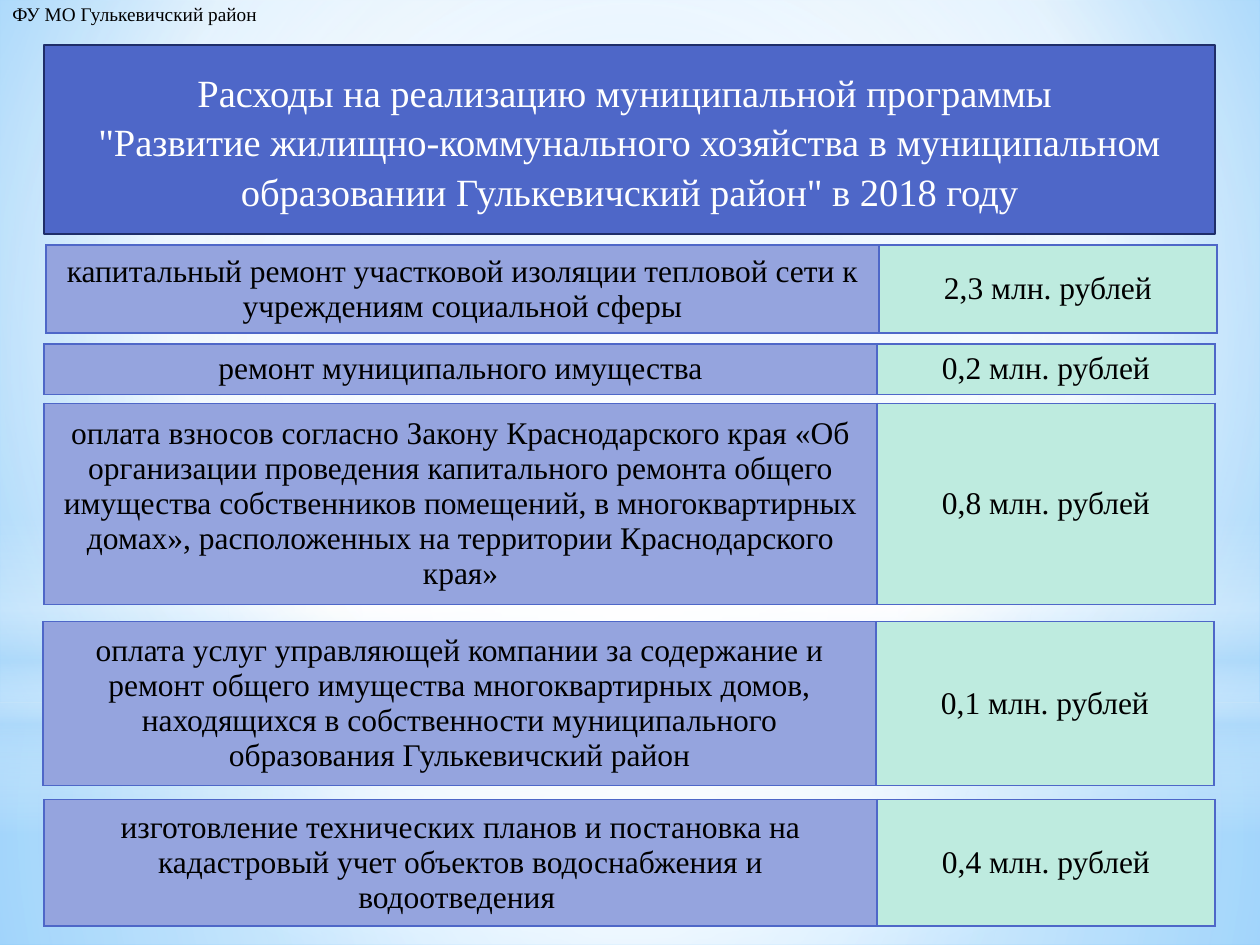
"""Build the slide on municipal housing programme spending in 2018."""
from dataclasses import dataclass

import lxml.etree
import pptx
import pptx.dml.color
import pptx.enum.shapes
import pptx.enum.text
import pptx.oxml
import pptx.oxml.ns
import pptx.util

Cm = pptx.util.Cm
Pt = pptx.util.Pt
qn = pptx.oxml.ns.qn
Kind = pptx.enum.shapes.MSO_SHAPE
Align = pptx.enum.text.PP_ALIGN
Anchor = pptx.enum.text.MSO_ANCHOR
NS = 'xmlns:a="http://schemas.openxmlformats.org/drawingml/2006/main"'


@dataclass(frozen=True)
class Theme:
    """Colours, font and type sizes."""
    font: str = "Times New Roman"
    ink: str = "000000"
    pale: str = "FFFFFF"
    sky: str = "B4DCFA"
    blue: str = "4E67C8"
    edge: str = "1F2E69"
    lilac: str = "95A4DE"
    mint: str = "BEEBDF"
    head: float = 22
    body: float = 18
    note: float = 11


T = Theme()


@dataclass(frozen=True)
class Stop:
    """A gradient stop; place and opacity in percent."""
    at: int
    color: str
    alpha: int = 100


@dataclass(frozen=True)
class Glow:
    """A soft backdrop shape; no focus means a vertical gradient."""
    kind: Kind
    top: float
    height: float
    stops: tuple[Stop, ...]
    focus: tuple[int, ...] = (50, 50, 50, 50)


@dataclass(frozen=True)
class Item:
    """One spending line, placed in centimetres."""
    text: str
    cost: str
    left: float
    top: float
    height: float


WIDE, HIGH = 25.4, 19.05
COLS = (16.79, 6.81)

GLOWS = (
    Glow(Kind.RECTANGLE, 14.17, 4.88,
         (Stop(0, T.pale, 91), Stop(37, T.pale, 76), Stop(100, T.sky, 79))),
    Glow(Kind.RECTANGLE, 0, 14.17,
         (Stop(0, T.pale, 89), Stop(48, T.pale, 62), Stop(100, T.sky, 79))),
    Glow(Kind.RECTANGLE, 10.46, 6.35,
         (Stop(0, T.pale, 0), Stop(29, T.pale, 30), Stop(45, T.sky, 40),
          Stop(55, T.pale, 26), Stop(65, T.sky, 60), Stop(100, T.pale, 0)), ()),
    Glow(Kind.OVAL, 4.45, 14.17, (Stop(0, T.pale), Stop(56, T.pale, 0))),
)

ITEMS = (
    Item("капитальный ремонт участковой изоляции тепловой сети к учреждениям "
         "социальной сферы", "2,3 млн. рублей", 0.93, 4.94, 1.77),
    Item("ремонт муниципального имущества", "0,2 млн. рублей", 0.89, 6.93, 1.02),
    Item("оплата взносов согласно Закону Краснодарского края «Об организации "
         "проведения капитального ремонта общего имущества собственников "
         "помещений, в многоквартирных домах», расположенных на территории "
         "Краснодарского края»", "0,8 млн. рублей", 0.89, 8.13, 4.06),
    Item("оплата услуг управляющей компании за содержание и ремонт общего "
         "имущества многоквартирных домов, находящихся в собственности "
         "муниципального образования Гулькевичский район",
         "0,1 млн. рублей", 0.87, 12.53, 3.3),
    Item("изготовление технических планов и постановка на кадастровый учет "
         "объектов водоснабжения и водоотведения ",
         "0,4 млн. рублей", 0.89, 16.12, 2.55),
)


def tint(color: str) -> pptx.dml.color.RGBColor:
    """Turn a hex string into a colour."""
    return pptx.dml.color.RGBColor.from_string(color)


def blend(node, stops: tuple[Stop, ...], focus: tuple[int, ...]) -> None:
    """Replace the default gradient inside node."""
    marks = "".join(
        f'<a:gs pos="{s.at * 1000}"><a:srgbClr val="{s.color}">'
        f'<a:alpha val="{s.alpha * 1000}"/></a:srgbClr></a:gs>' for s in stops)
    if focus:
        rect = " ".join(f'{k}="{v * 1000}"' for k, v in zip("ltrb", focus))
        shade = f'<a:path path="circle"><a:fillToRect {rect}/></a:path>'
    else:
        shade = '<a:lin ang="5400000" scaled="0"/>'
    old = next(node.iter(qn("a:gradFill")))
    old.getparent().replace(old, pptx.oxml.parse_xml(
        f'<a:gradFill {NS} rotWithShape="1"><a:gsLst>{marks}</a:gsLst>{shade}</a:gradFill>'))


def style(frame, size: float, color: str, align: Align) -> None:
    """Format all text in a frame."""
    for para in frame.paragraphs:
        para.alignment = align
        for run in para.runs:
            run.font.name = T.font
            run.font.size = Pt(size)
            run.font.color.rgb = tint(color)


def add_glow(slide, glow: Glow) -> None:
    """Draw one backdrop shape."""
    shape = slide.shapes.add_shape(
        glow.kind, 0, Cm(glow.top), Cm(WIDE), Cm(glow.height))
    shape.shadow.inherit = False
    shape.line.fill.background()
    shape.fill.gradient()
    blend(shape.element, glow.stops, glow.focus)


def add_note(slide) -> None:
    """Write the office name in the corner."""
    box = slide.shapes.add_textbox(0, Cm(-0.08), Cm(5.54), Cm(0.74))
    box.text_frame.word_wrap = False
    box.text_frame.text = "ФУ МО Гулькевичский район"
    style(box.text_frame, T.note, T.ink, Align.LEFT)


def set_title(slide) -> None:
    """Shape the title placeholder as a rounded panel in front."""
    title = slide.shapes.title
    title.left, title.top = Cm(0.89), Cm(0.91)
    title.width, title.height = Cm(23.6), Cm(3.81)
    title.element.spPr.insert(1, pptx.oxml.parse_xml(
        f'<a:prstGeom {NS} prst="roundRect"><a:avLst/></a:prstGeom>'))
    title.fill.solid()
    title.fill.fore_color.rgb = tint(T.blue)
    title.line.color.rgb = tint(T.edge)
    title.line.width = Pt(1.25)
    frame = title.text_frame
    frame.text = ('Расходы на реализацию муниципальной программы \n'
                  '"Развитие жилищно-коммунального хозяйства в муниципальном '
                  'образовании Гулькевичский район" в 2018 году')
    frame.word_wrap = True
    frame.auto_size = pptx.enum.text.MSO_AUTO_SIZE.NONE
    frame.vertical_anchor = Anchor.MIDDLE
    style(frame, T.head, T.pale, Align.CENTER)
    for para in frame.paragraphs:
        para.line_spacing = 1.08
        para.space_before = Pt(0)
    slide.shapes.element.append(title.element)


def add_item(slide, item: Item) -> None:
    """Draw one spending line as a table."""
    table = slide.shapes.add_table(
        1, 2, Cm(item.left), Cm(item.top), Cm(sum(COLS)), Cm(item.height)).table
    table.first_row = table.horz_banding = False
    pairs = ((item.text, T.lilac), (item.cost, T.mint))
    for i, (text, color) in enumerate(pairs):
        table.columns[i].width = Cm(COLS[i])
        cell = table.cell(0, i)
        cell.text_frame.text = text
        cell.vertical_anchor = Anchor.MIDDLE
        cell.fill.solid()
        cell.fill.fore_color.rgb = tint(color)
        style(cell.text_frame, T.body, T.ink, Align.CENTER)
        props = cell.fill._xPr
        for spot, side in enumerate("LRTB"):
            line = lxml.etree.fromstring(
                f'<a:ln{side} {NS} w="{Pt(1)}"><a:solidFill>'
                f'<a:srgbClr val="{T.blue}"/></a:solidFill></a:ln{side}>')
            props.insert(spot, line)


def main() -> None:
    """Build and save the slide."""
    deck = pptx.Presentation()
    deck.slide_width, deck.slide_height = Cm(WIDE), Cm(HIGH)
    slide = deck.slides.add_slide(deck.slide_layouts[5])
    slide.background.fill.gradient()
    blend(slide.element, (Stop(0, "9ED5FF"), Stop(60, T.pale), Stop(100, "5BB9FF")),
          (20, 10, 20, 60))
    for glow in GLOWS:
        add_glow(slide, glow)
    add_note(slide)
    set_title(slide)
    for item in ITEMS:
        add_item(slide, item)
    deck.save("out.pptx")


if __name__ == "__main__":
    main()
